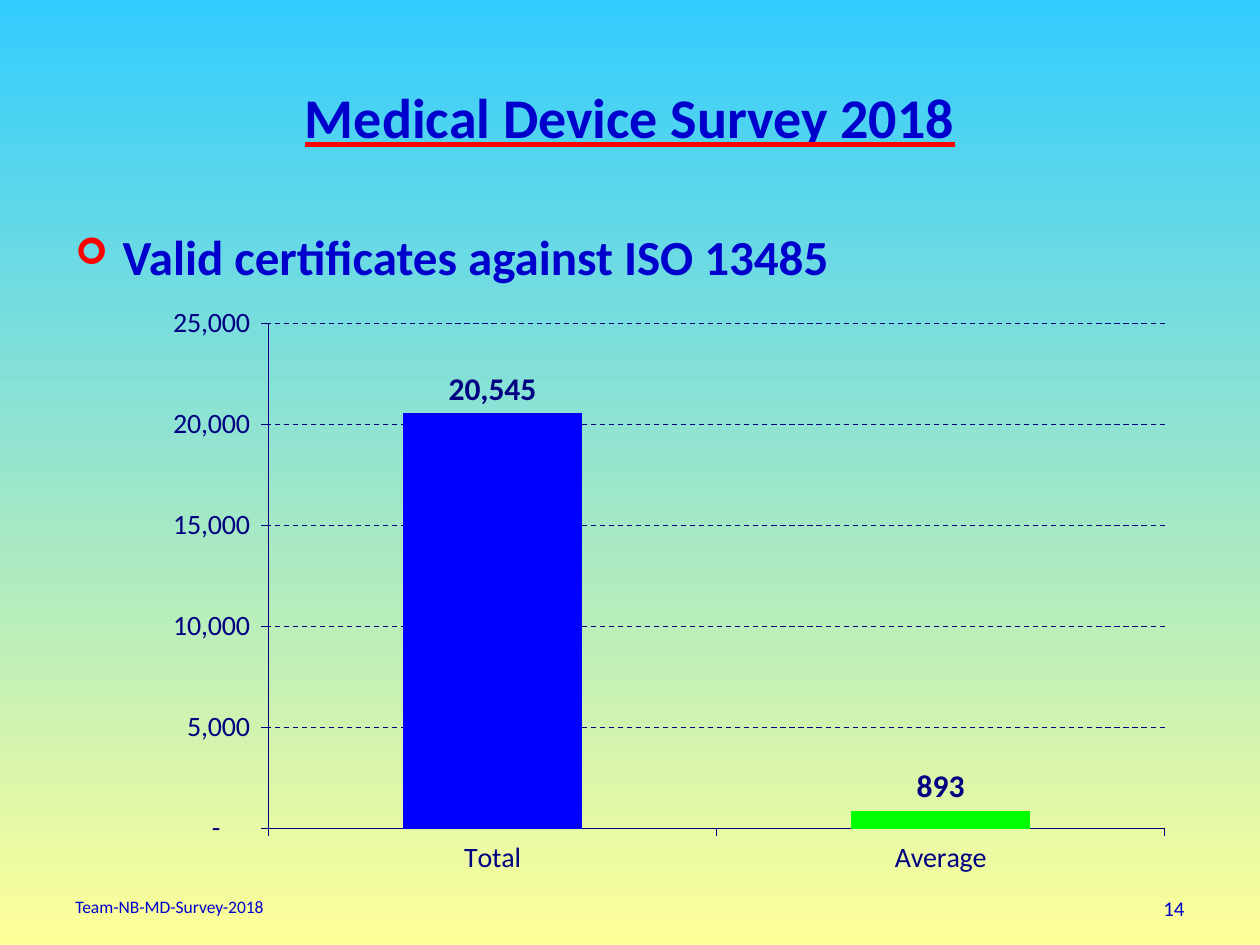
from lxml import etree
from pptx import Presentation
from pptx.chart.data import CategoryChartData
from pptx.dml.color import RGBColor
from pptx.enum.chart import XL_CHART_TYPE, XL_LABEL_POSITION, XL_TICK_MARK
from pptx.enum.dml import MSO_LINE
from pptx.enum.text import MSO_ANCHOR, PP_ALIGN
from pptx.oxml import parse_xml
from pptx.oxml.ns import nsdecls, qn
from pptx.util import Pt

COLUMNS = XL_CHART_TYPE.COLUMN_CLUSTERED
OUTSIDE_END = XL_LABEL_POSITION.OUTSIDE_END
TICK_OUT = XL_TICK_MARK.OUTSIDE
DASH = MSO_LINE.DASH
TOP, MIDDLE = MSO_ANCHOR.TOP, MSO_ANCHOR.MIDDLE
LEFT, CENTER, RIGHT = PP_ALIGN.LEFT, PP_ALIGN.CENTER, PP_ALIGN.RIGHT

FONT = "Calibri"
BLUE, NAVY, RED = "0000CC", "000080", "FF0000"
BACKGROUND = ["33CCFF", "FFFF99"]
NUMBER_FORMAT = r'_ * #,##0_ ;_ * \-#,##0_ ;_ * "-"??_ ;_ '

TITLE = ("Medical Device Survey 2018", (36, 21.6, 648, 90), 32, True, CENTER, MIDDLE)
HEADING = ("Valid certificates against ISO 13485", (36, 126, 648, 59), 28, True, LEFT, TOP)
FOOTER = ("Team-NB-MD-Survey-2018", (36, 508.3, 228, 21), 10, False, LEFT, TOP)
PAGE_NUMBER = ("14", (516, 508.3, 168, 21), 12, False, RIGHT, TOP)

CHART_BOX = (82, 167.8, 595.5, 339.8)
PLOT_AREA = {"x": 0.12, "y": 0.05, "w": 0.86, "h": 0.85}
BARS = [("Total", 20545, "0000FF"), ("Average", 893, "00FF00")]


def color(value):
    return RGBColor.from_string(value)


def style_font(font, size, value, bold=False):
    font.name = FONT
    font.size = Pt(size)
    font.bold = bold
    font.color.rgb = color(value)


def style_line(line):
    line.color.rgb = color(NAVY)
    line.width = Pt(0.75)


def add_text(slide, text, box, size, bold, alignment, anchor):
    shape = slide.shapes.add_textbox(*map(Pt, box))
    frame = shape.text_frame
    frame.word_wrap = True
    frame.vertical_anchor = anchor
    frame.text = text
    paragraph = frame.paragraphs[0]
    paragraph.alignment = alignment
    style_font(paragraph.runs[0].font, size, BLUE, bold)
    return paragraph


def underline(paragraph, value):
    run = paragraph.runs[0]
    run.font.underline = True
    properties = run.font._element
    properties.find(qn("a:latin")).addprevious(parse_xml(
        f'<a:uFill {nsdecls("a")}><a:solidFill><a:srgbClr val="{value}"/>'
        '</a:solidFill></a:uFill>'))


def add_bullet(paragraph, character, value):
    properties = paragraph._p.get_or_add_pPr()
    properties.set("marL", str(Pt(27)))
    properties.set("indent", str(-Pt(27)))
    bullet_color = etree.SubElement(properties, qn("a:buClr"))
    etree.SubElement(bullet_color, qn("a:srgbClr"), val=value)
    etree.SubElement(properties, qn("a:buSzPct"), val="75000")
    etree.SubElement(properties, qn("a:buFont"), typeface="Wingdings")
    etree.SubElement(properties, qn("a:buChar"), char=character)


def place_plot(chart):
    plot_area = chart._chartSpace.chart.plotArea
    for layout in plot_area.findall(qn("c:layout")):
        plot_area.remove(layout)
    layout = etree.Element(qn("c:layout"))
    manual = etree.SubElement(layout, qn("c:manualLayout"))
    etree.SubElement(manual, qn("c:layoutTarget"), val="inner")
    for side in "xy":
        etree.SubElement(manual, qn(f"c:{side}Mode"), val="edge")
    for name, share in PLOT_AREA.items():
        etree.SubElement(manual, qn(f"c:{name}"), val=str(share))
    plot_area.insert(0, layout)


def add_bar_chart(slide):
    data = CategoryChartData(number_format=NUMBER_FORMAT)
    data.categories = [name for name, _, _ in BARS]
    data.add_series("Series 1", [count for _, count, _ in BARS])
    chart = slide.shapes.add_chart(COLUMNS, *map(Pt, CHART_BOX), data).chart
    chart.has_title = False
    chart.has_legend = False
    style_font(chart.font, 16, NAVY)
    place_plot(chart)

    for axis in (chart.category_axis, chart.value_axis):
        axis.major_tick_mark = TICK_OUT
        style_font(axis.tick_labels.font, 16, NAVY)
        style_line(axis.format.line)
    values = chart.value_axis
    values.minimum_scale, values.maximum_scale, values.major_unit = 0, 25000, 5000
    values.tick_labels.number_format = NUMBER_FORMAT
    values.tick_labels.number_format_is_linked = False
    grid = values.major_gridlines.format.line
    style_line(grid)
    grid.dash_style = DASH

    plot = chart.plots[0]
    plot.gap_width = 150
    plot.vary_by_categories = False
    series = plot.series[0]
    for index, (_, _, value) in enumerate(BARS):
        fill = series.points[index].format.fill
        fill.solid()
        fill.fore_color.rgb = color(value)
    labels = series.data_labels
    labels.show_value = True
    labels.position = OUTSIDE_END
    labels.number_format = NUMBER_FORMAT
    labels.number_format_is_linked = False
    style_font(labels.font, 18, NAVY, True)


def main():
    presentation = Presentation()
    presentation.slide_width, presentation.slide_height = Pt(720), Pt(540)
    slide = presentation.slides.add_slide(presentation.slide_layouts[6])
    fill = slide.background.fill
    fill.gradient()
    fill.gradient_angle = 270
    for position, (stop, value) in enumerate(zip(fill.gradient_stops, BACKGROUND)):
        stop.position = position
        stop.color.rgb = color(value)

    underline(add_text(slide, *TITLE), RED)
    add_text(slide, *PAGE_NUMBER)
    add_bullet(add_text(slide, *HEADING), "➢", RED)
    add_text(slide, *FOOTER)
    add_bar_chart(slide)
    presentation.save("out.pptx")


if __name__ == "__main__":
    main()
